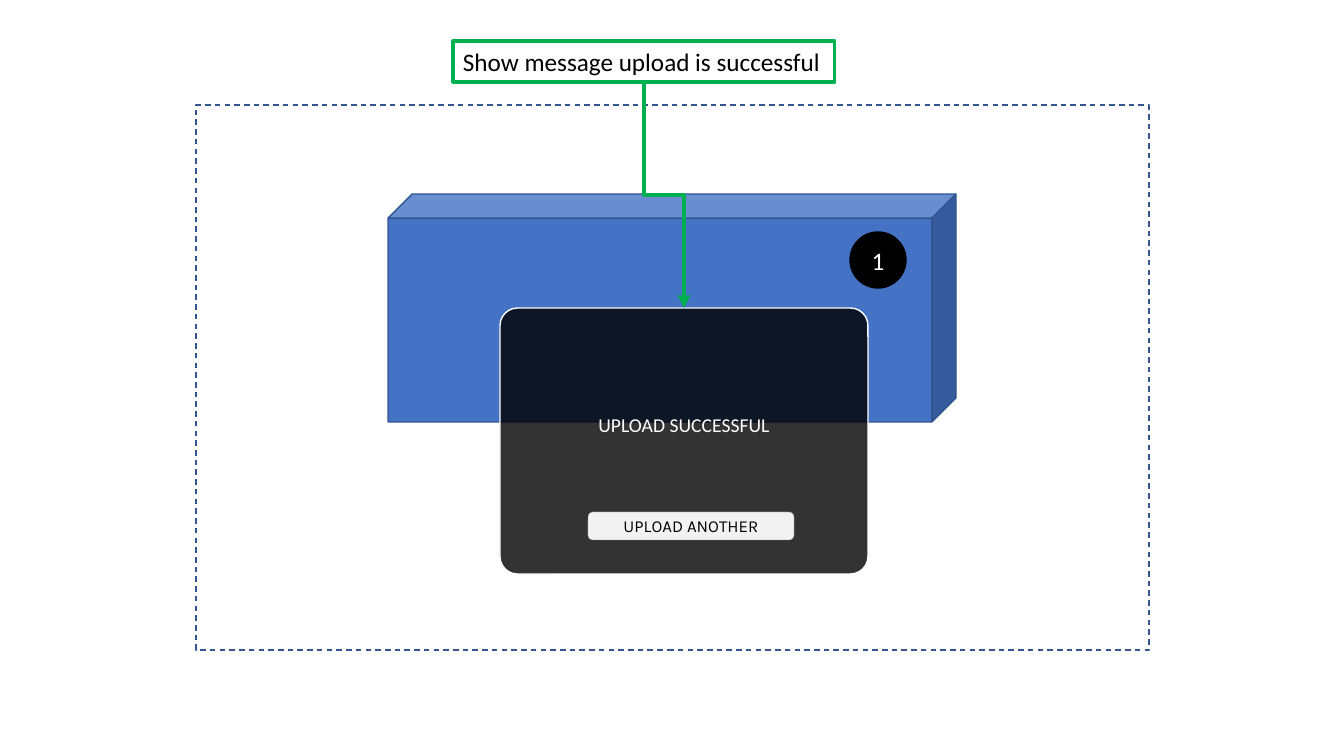
from dataclasses import dataclass

from lxml.etree import SubElement
from pptx import Presentation
from pptx.dml.color import RGBColor
from pptx.enum.dml import MSO_LINE_DASH_STYLE as Dash
from pptx.enum.shapes import MSO_CONNECTOR as ConnectorKind, MSO_SHAPE as ShapeKind
from pptx.enum.text import MSO_ANCHOR as Anchor, PP_ALIGN as Align
from pptx.oxml.ns import qn
from pptx.util import Pt

SLIDE_WIDTH, SLIDE_HEIGHT = 1344, 756
EMU_PER_PX = 12192000 / SLIDE_WIDTH
TOP, BOTTOM = 0, 2


@dataclass(frozen=True)
class Theme:
    blue: str = "4472C4"
    blue_edge: str = "325491"
    green: str = "00B050"
    black: str = "000000"
    white: str = "FFFFFF"
    button_fill: str = "F2F2F2"
    button_edge: str = "808080"
    font: str = "Calibri"
    button_font: str = "Karla"
    large: int = 18
    medium: int = 14
    small: int = 12


def px(length):
    return round(length * EMU_PER_PX)


class SlideBuilder:
    def __init__(self, slide, theme):
        self.slide = slide
        self.theme = theme

    def set_line(self, line, color, width, dash=None):
        line.color.rgb = RGBColor.from_string(color)
        line.width = Pt(width)
        if dash:
            line.dash_style = dash

    def shape(self, kind, box, line, fill=None, opacity=100, corner=None):
        shape = self.slide.shapes.add_shape(kind, *map(px, box))
        shape.shadow.inherit = False
        if corner is not None:
            shape.adjustments[0] = corner
        if fill:
            shape.fill.solid()
            shape.fill.fore_color.rgb = RGBColor.from_string(fill)
            if opacity < 100:
                color = shape.fill._xPr.find(".//" + qn("a:srgbClr"))
                SubElement(color, qn("a:alpha")).set("val", str(opacity * 1000))
        else:
            shape.fill.background()
        self.set_line(shape.line, *line)
        return shape

    def text(self, shape, words, size, color, font=None, align=Align.CENTER, **frame_format):
        """Write one paragraph; frame_format holds text frame attributes."""
        frame = shape.text_frame
        frame_values = {"word_wrap": True, "vertical_anchor": Anchor.MIDDLE, **frame_format}
        for name, value in frame_values.items():
            setattr(frame, name, value)
        paragraph = frame.paragraphs[0]
        paragraph.alignment = align
        run = paragraph.add_run()
        run.text = words
        font_values = {"name": font or self.theme.font, "size": Pt(size)}
        for name, value in font_values.items():
            setattr(run.font, name, value)
        run.font.color.rgb = RGBColor.from_string(color)

    def elbow_down(self, upper, lower, color, width):
        """Join upper's bottom to a lower shape further right, leaving vertically."""
        connector = self.slide.shapes.add_connector(ConnectorKind.ELBOW, 0, 0, 0, 0)
        connector.begin_connect(upper, BOTTOM)
        connector.end_connect(lower, TOP)
        jog, drop = connector.width, connector.height
        center_x, center_y = connector.left + jog // 2, connector.top + drop // 2
        turned = {"left": center_x - drop // 2, "top": center_y - jog // 2,
                  "width": drop, "height": jog}
        for name, value in turned.items():
            setattr(connector, name, value)
        properties = connector._element.spPr
        transform = properties.find(qn("a:xfrm"))
        transform.set("rot", str(270 * 60000))
        transform.set("flipH", "1")
        self.set_line(connector.line, color, width)
        SubElement(connector.line._get_or_add_ln(), qn("a:tailEnd")).set("type", "triangle")
        SubElement(properties, qn("a:effectLst"))


def main():
    presentation = Presentation()
    presentation.slide_width = px(SLIDE_WIDTH)
    presentation.slide_height = px(SLIDE_HEIGHT)
    theme = Theme()
    builder = SlideBuilder(presentation.slides.add_slide(presentation.slide_layouts[6]), theme)

    builder.shape(ShapeKind.RECTANGLE, (196, 105, 953, 545), (theme.blue_edge, 1, Dash.DASH))
    builder.shape(ShapeKind.CUBE, (388, 194, 568, 228), (theme.blue_edge, 1),
                  theme.blue, corner=0.106)

    badge = builder.shape(ShapeKind.OVAL, (850, 232, 56, 56), (theme.black, 1), theme.black)
    builder.text(badge, "1", theme.large, theme.white)

    panel = builder.shape(ShapeKind.ROUNDED_RECTANGLE, (500, 308, 368, 266), (theme.white, 1),
                          theme.black, opacity=80, corner=0.066)
    builder.text(panel, "UPLOAD SUCCESSFUL", theme.medium, theme.white,
                 vertical_anchor=Anchor.TOP, margin_top=px(100))

    button = builder.shape(ShapeKind.ROUNDED_RECTANGLE, (588, 512, 206, 28),
                           (theme.button_edge, 0.25), theme.button_fill)
    builder.text(button, "UPLOAD ANOTHER", theme.small, theme.black, theme.button_font,
                 margin_top=0, margin_bottom=px(1))

    message = builder.shape(ShapeKind.RECTANGLE, (453, 41, 382, 41), (theme.green, 2.25))
    builder.text(message, "Show message upload is successful", theme.large, theme.black,
                 align=Align.LEFT)
    builder.elbow_down(message, panel, theme.green, 3)

    presentation.save("out.pptx")


if __name__ == "__main__":
    main()
